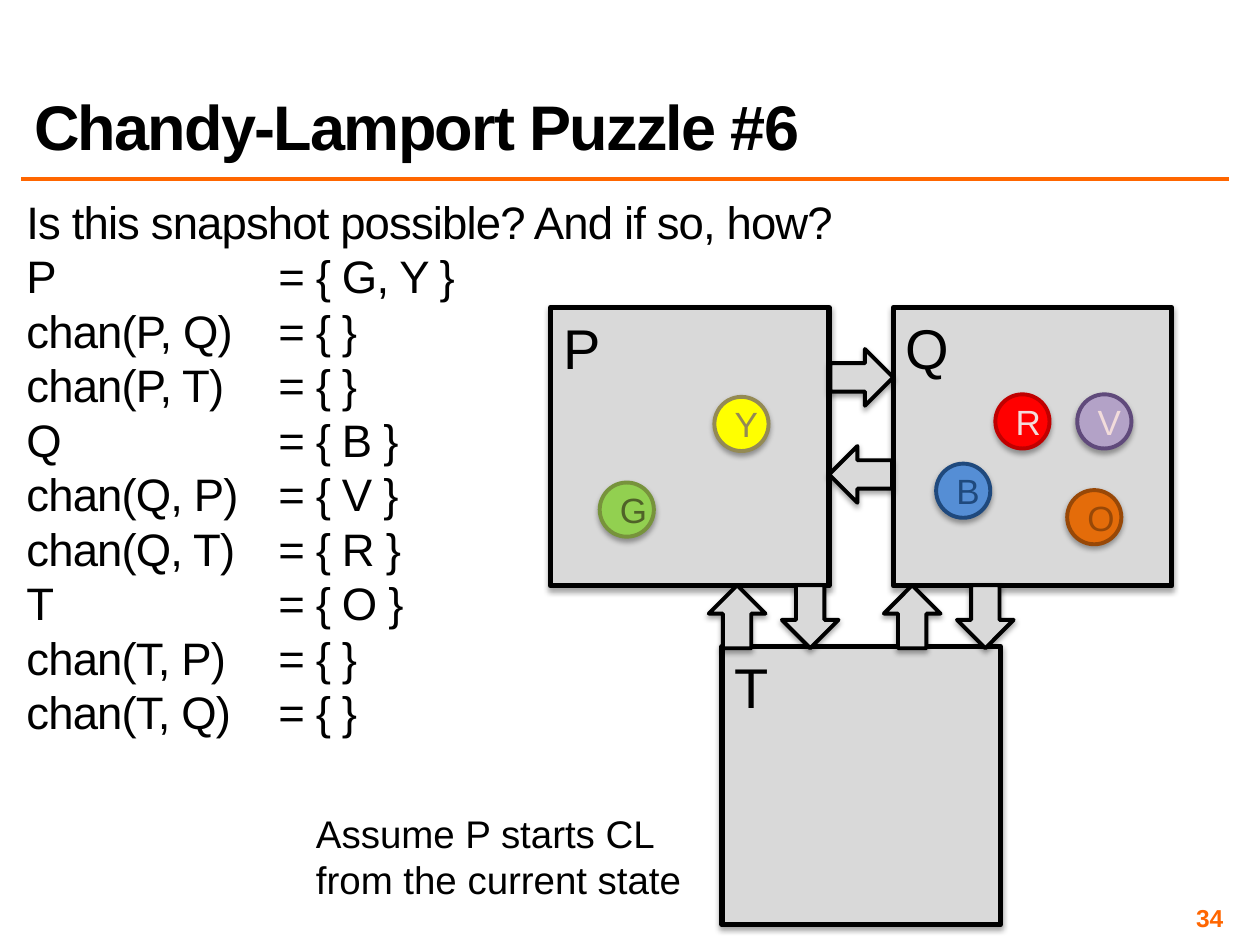
from lxml.etree import SubElement
from pptx import Presentation
from pptx.dml.color import RGBColor
from pptx.enum.shapes import MSO_CONNECTOR, MSO_SHAPE
from pptx.enum.text import MSO_ANCHOR, MSO_AUTO_SIZE, PP_ALIGN
from pptx.oxml.ns import qn
from pptx.util import Inches, Pt

TITLE = "Chandy-Lamport Puzzle #6"
ASK = "Is this snapshot possible? And if so, how?"
STATES = [
    ("P", "{ G, Y }"), ("chan(P, Q)", "{ }"), ("chan(P, T)", "{ }"),
    ("Q", "{ B }"), ("chan(Q, P)", "{ V }"), ("chan(Q, T)", "{ R }"),
    ("T", "{ O }"), ("chan(T, P)", "{ }"), ("chan(T, Q)", "{ }"),
]
NOTE = "Assume P starts CL from the current state"
PAGE = "34"
NODES = [("P", 4.37, 2.44), ("Q", 7.09, 2.44), ("T", 5.73, 5.13)]
TOKENS = [
    ("R", 7.9, 3.13, "FF0000", "C00000", "F2DCDB"),
    ("G", 4.76, 3.83, "92D050", "77933C", "4F6228"),
    ("B", 7.43, 3.68, "558ED5", "1F497D", "1F497D"),
    ("Y", 5.67, 3.15, "FFFF00", "948A54", "948A54"),
    ("O", 8.47, 3.89, "E46C0A", "984807", "984807"),
    ("V", 8.55, 3.13, "B3A2C7", "604A7B", "F2DCDB"),
]
ARROWS = [
    (5.6, 4.67, 270), (6.18, 4.67, 90), (6.59, 2.77, 0),
    (6.58, 3.54, 180), (6.99, 4.67, 270), (7.57, 4.67, 90),
]
BLACK, GRAY, ORANGE = "000000", "D9D9D9", "FF6600"
NODE, TOKEN = 2.21, 0.43


def color(code):
    return RGBColor.from_string(code)


def style(frame, size, code=BLACK, bold=False, track=0, align=PP_ALIGN.LEFT):
    for para in frame.paragraphs:
        para.alignment = align
        for run in para.runs:
            font = run.font
            font.name, font.size, font.bold = "Arial", Pt(size), bold
            font.color.rgb = color(code)
            if track:
                font._element.set("spc", str(track))


def shade(shape):
    shape.shadow.inherit = False
    effect = shape._element.spPr.find(qn("a:effectLst"))
    outer = SubElement(effect, qn("a:outerShdw"), blurRad=str(Pt(3.1)),
                       dist=str(Pt(1.8)), dir="5400000", rotWithShape="0")
    black = SubElement(outer, qn("a:srgbClr"), val=BLACK)
    SubElement(black, qn("a:alpha"), val="35000")


def draw(slide, kind, box, fill, line, width):
    shape = slide.shapes.add_shape(kind, *map(Inches, box))
    shape.fill.solid()
    shape.fill.fore_color.rgb = color(fill)
    shape.line.color.rgb = color(line)
    shape.line.width = Pt(width)
    shade(shape)
    return shape


def write(slide, box, text, inset=None):
    frame = slide.shapes.add_textbox(*map(Inches, box)).text_frame
    frame.word_wrap = True
    frame.text = text
    if inset is not None:
        frame.margin_left = frame.margin_right = Inches(inset)
        frame.margin_top = frame.margin_bottom = Inches(inset)
    return frame


def add_title(slide):
    title = slide.shapes.title
    title.left, title.top = Inches(0.17), Inches(0.17)
    title.width, title.height = Inches(9.58), Inches(1.17)
    frame = title.text_frame
    frame.text = TITLE
    frame.auto_size = MSO_AUTO_SIZE.NONE
    frame.vertical_anchor = MSO_ANCHOR.BOTTOM
    frame.paragraphs[0].line_spacing = 0.8
    style(frame, 36, bold=True, track=-100)


def add_rule(slide):
    rule = slide.shapes.add_connector(
        MSO_CONNECTOR.STRAIGHT, *map(Inches, (0.17, 1.42, 9.75, 1.42)))
    rule.line.color.rgb = color(ORANGE)
    rule.line.width = Pt(2)
    SubElement(rule._element.spPr, qn("a:effectLst"))


def add_body(slide):
    lines = [ASK] + [f"{name}\t= {value}" for name, value in STATES]
    frame = write(slide, (0.17, 1.58, 9.58, 5.11), "\n".join(lines), 0.04)
    style(frame, 26, track=-50)
    for para in frame.paragraphs:
        para.line_spacing = 0.8
        para.space_before = Pt(6.2)
        tabs = SubElement(para._p.get_or_add_pPr(), qn("a:tabLst"))
        SubElement(tabs, qn("a:tab"), pos=str(Inches(2)), algn="l")


def add_graph(slide):
    for name, left, top in NODES:
        node = draw(slide, MSO_SHAPE.RECTANGLE, (left, top, NODE, NODE), GRAY, BLACK, 3)
        node.text_frame.text = name
        node.text_frame.vertical_anchor = MSO_ANCHOR.TOP
        style(node.text_frame, 32)
    for name, left, top, fill, line, ink in TOKENS:
        token = draw(slide, MSO_SHAPE.OVAL, (left, top, TOKEN, TOKEN), fill, line, 2.25)
        token.text_frame.text = name
        style(token.text_frame, 20, ink, align=PP_ALIGN.CENTER)
    for left, top, turn in ARROWS:
        arrow = draw(slide, MSO_SHAPE.RIGHT_ARROW, (left, top, 0.5, 0.45), GRAY, BLACK, 2.25)
        arrow.rotation = turn


def main():
    """Build the snapshot puzzle slide."""
    deck = Presentation()
    deck.slide_width, deck.slide_height = Inches(10), Inches(7.5)
    slide = deck.slides.add_slide(deck.slide_layouts[5])
    add_rule(slide)
    add_title(slide)
    add_body(slide)
    add_graph(slide)
    style(write(slide, (2.41, 6.38, 3.33, 0.84), NOTE), 22)
    page = write(slide, (7.42, 7.17, 2.33, 0.23), PAGE, 0.04)
    page.vertical_anchor = MSO_ANCHOR.MIDDLE
    style(page, 14, ORANGE, bold=True, align=PP_ALIGN.RIGHT)
    deck.save("out.pptx")


if __name__ == "__main__":
    main()
